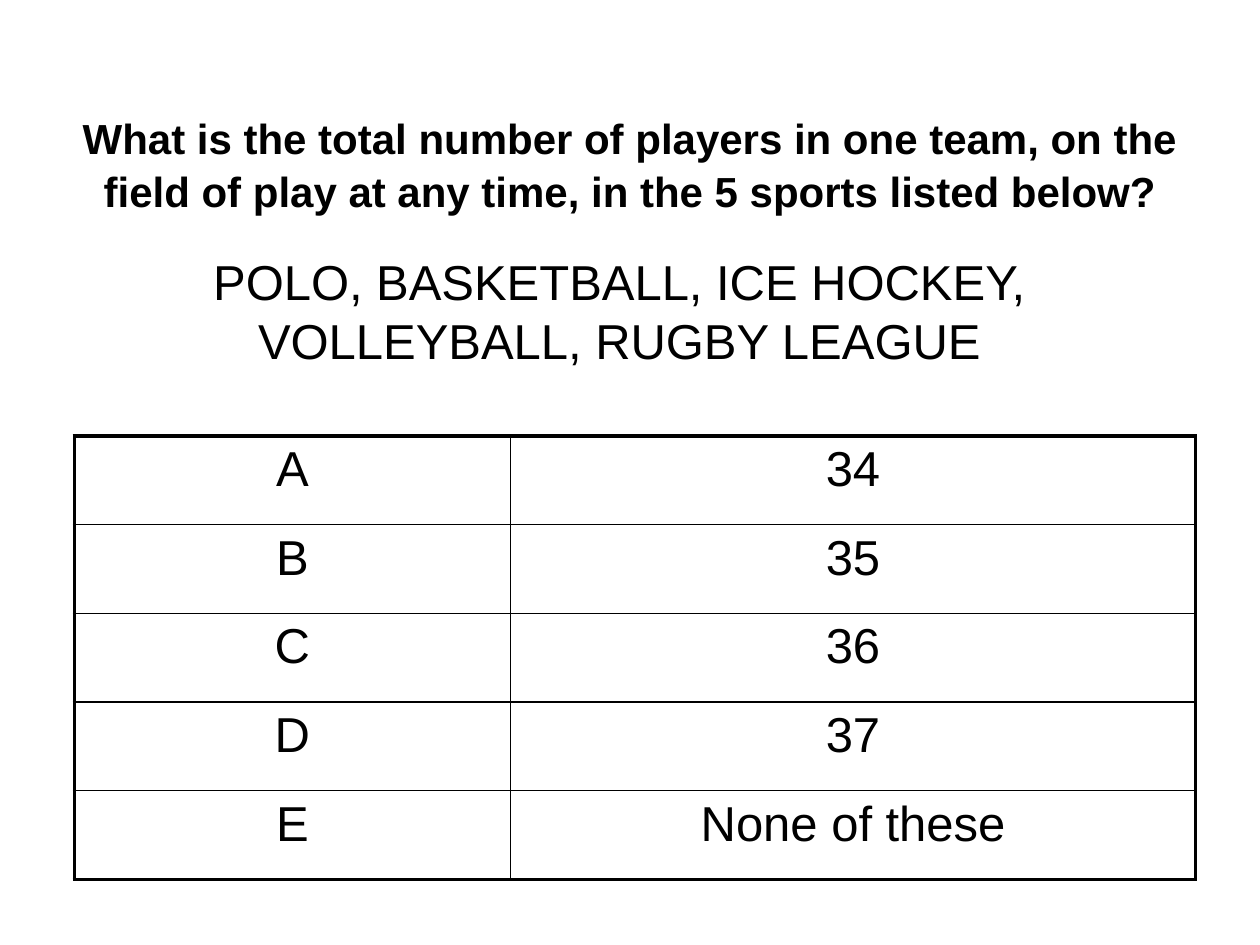
import pptx
import pptx.dml.color
import pptx.enum.text
import pptx.oxml
import pptx.oxml.ns
import pptx.util
from pptx.util import Inches

COLORS = {"ink": "000000", "paper": "FFFFFF"}
THIN, THICK = 1, 2.25


def write_centred(text_frame, wording, size, bold=False):
    text_frame.text = wording
    paragraph = text_frame.paragraphs[0]
    paragraph.alignment = pptx.enum.text.PP_ALIGN.CENTER
    font = paragraph.runs[0].font
    font.name = "Arial"
    font.size = pptx.util.Pt(size)
    font.bold = bold
    font.color.rgb = pptx.dml.color.RGBColor.from_string(COLORS["ink"])
    return paragraph


def set_borders(cell, widths):
    """Draw the left, right, top and bottom edges at the given point widths."""
    properties = cell._tc.get_or_add_tcPr()
    for position, (side, width) in enumerate(zip("LRTB", widths)):
        edge = pptx.oxml.parse_xml(
            f'<a:ln{side} {pptx.oxml.ns.nsdecls("a")} w="{pptx.util.Pt(width)}">'
            f'<a:solidFill><a:srgbClr val="{COLORS["ink"]}"/></a:solidFill>'
            f'</a:ln{side}>'
        )
        properties.insert(position, edge)


deck = pptx.Presentation()
deck.slide_width, deck.slide_height = Inches(10), Inches(7.5)
slide = deck.slides.add_slide(deck.slide_layouts[6])
slide.background.fill.solid()
slide.background.fill.fore_color.rgb = pptx.dml.color.RGBColor.from_string(COLORS["paper"])

# Question and the sports it asks about: place, top inset, size, bold, line height
prompts = [
    ("What is the total number of players in one team, on the field of play "
     "at any time, in the 5 sports listed below?",
     (0.5, 0.68, 9, 0.71), 0.2, 24, True, 30),
    ("POLO, BASKETBALL, ICE HOCKEY, VOLLEYBALL, RUGBY LEAGUE",
     (0.5, 1.94, 8.83, 1.52), 0.05, 28, False, 34),
]
for wording, place, top_inset, size, bold, line_height in prompts:
    prompt = slide.shapes.add_textbox(*map(Inches, place)).text_frame
    prompt.word_wrap = True
    prompt.margin_top = Inches(top_inset)
    paragraph = write_centred(prompt, wording, size, bold)
    paragraph.line_spacing = pptx.util.Pt(line_height)

# Answer options
options = [("A", "34"), ("B", "35"), ("C", "36"), ("D", "37"), ("E", "None of these")]
last_row = len(options) - 1
answers = slide.shapes.add_table(
    len(options), 2, Inches(0.59), Inches(3.46), Inches(8.9), Inches(3.52)
).table
answers.first_row = answers.horz_banding = False
for column, width in zip(answers.columns, (3.46, 5.44)):
    column.width = Inches(width)

for row, option in enumerate(options):
    for column, wording in enumerate(option):
        cell = answers.cell(row, column)
        write_centred(cell.text_frame, wording, 28)
        cell.fill.background()
        on_outside = (column == 0, column == 1, row == 0, row == last_row)
        set_borders(cell, [THICK if outer else THIN for outer in on_outside])

deck.save("out.pptx")
